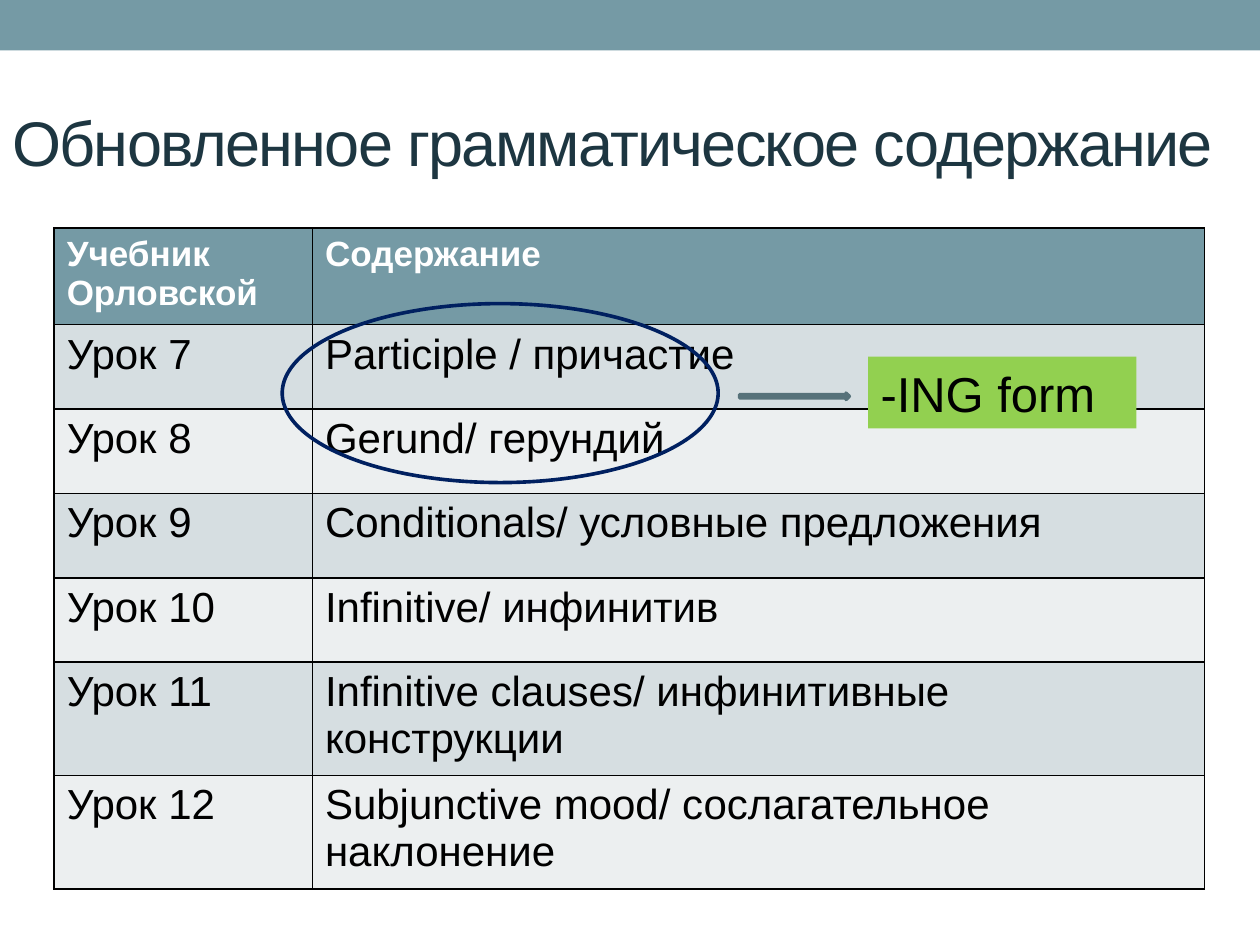
from typing import NamedTuple, Optional

from lxml import etree
from pptx import Presentation
from pptx.dml.color import RGBColor
from pptx.enum.shapes import MSO_SHAPE
from pptx.enum.text import MSO_ANCHOR, PP_ALIGN
from pptx.oxml.ns import qn
from pptx.util import Inches, Pt

RECT, OVAL, ARROW = MSO_SHAPE.RECTANGLE, MSO_SHAPE.OVAL, MSO_SHAPE.RIGHT_ARROW
MIDDLE, LEFT = MSO_ANCHOR.MIDDLE, PP_ALIGN.LEFT

TEAL = RGBColor(0x75, 0x9A, 0xA5)
DARK_TEAL = RGBColor(0x57, 0x72, 0x7A)
TITLE_COLOR = RGBColor(0x1D, 0x36, 0x41)
BAND_DARK = RGBColor(0xD6, 0xDE, 0xE1)
BAND_LIGHT = RGBColor(0xEC, 0xEF, 0xF0)
NAVY = RGBColor(0x00, 0x20, 0x60)
GREEN = RGBColor(0x92, 0xD0, 0x50)
BLACK = RGBColor(0, 0, 0)
WHITE = RGBColor(0xFF, 0xFF, 0xFF)

FONT = "Arial"
LINE_WIDTH = 2.08


class Box(NamedTuple):
    left: float
    top: float
    width: float
    height: float

    def lengths(self):
        return [Inches(v) for v in self]


class Lesson(NamedTuple):
    unit: str
    topic: str


HEADER = Lesson("Учебник Орловской", "Содержание")
LESSONS = [
    Lesson("Урок 7", "Participle / причастие"),
    Lesson("Урок 8", "Gerund/ герундий"),
    Lesson("Урок 9", "Conditionals/ условные предложения"),
    Lesson("Урок 10", "Infinitive/ инфинитив"),
    Lesson("Урок 11", "Infinitive clauses/ инфинитивные конструкции"),
    Lesson("Урок 12", "Subjunctive mood/ сослагательное наклонение"),
]
COLUMN_WIDTHS = (2.05, 7.08)
HEADER_HEIGHT, ROW_HEIGHT = 0.71, 0.67


def set_text(tf, text: str, size: float, color: RGBColor, bold: bool = False):
    tf.text = text
    p = tf.paragraphs[0]
    p.alignment = LEFT
    r = p.runs[0]
    r.font.name, r.font.size, r.font.bold = FONT, Pt(size), bold
    r.font.color.rgb = color
    return r


def add_shape(slide, kind, box: Box, fill: Optional[RGBColor] = None,
              line: Optional[RGBColor] = None):
    sp = slide.shapes.add_shape(kind, *box.lengths())
    sp.shadow.inherit = False
    if fill is None:
        sp.fill.background()
    else:
        sp.fill.solid()
        sp.fill.fore_color.rgb = fill
    if line is None:
        sp.line.fill.background()
    else:
        sp.line.color.rgb = line
        sp.line.width = Pt(LINE_WIDTH)
    return sp


def add_title(slide, text: str, box: Box) -> None:
    tf = slide.shapes.add_textbox(*box.lengths()).text_frame
    tf.word_wrap = True
    tf.vertical_anchor = MIDDLE
    r = set_text(tf, text, 36, TITLE_COLOR)
    r.font._element.set("spc", "-100")


def set_borders(cell) -> None:
    """Draw a 1 pt black line on all four sides, ahead of the fill element."""
    tc_pr = cell._tc.get_or_add_tcPr()
    for i, side in enumerate(("a:lnL", "a:lnR", "a:lnT", "a:lnB")):
        ln = etree.Element(qn(side), w=str(Pt(1)))
        fill = etree.SubElement(ln, qn("a:solidFill"))
        etree.SubElement(fill, qn("a:srgbClr"), val=str(BLACK))
        tc_pr.insert(i, ln)


def add_lesson_table(slide, left: float, top: float) -> None:
    rows = [HEADER, *LESSONS]
    box = Box(left, top, sum(COLUMN_WIDTHS),
              HEADER_HEIGHT + ROW_HEIGHT * len(LESSONS))
    table = slide.shapes.add_table(len(rows), len(COLUMN_WIDTHS),
                                   *box.lengths()).table
    for column, width in zip(table.columns, COLUMN_WIDTHS):
        column.width = Inches(width)
    for i, lesson in enumerate(rows):
        is_header = i == 0
        table.rows[i].height = Inches(HEADER_HEIGHT if is_header else ROW_HEIGHT)
        band = BAND_DARK if i % 2 else BAND_LIGHT
        for j, text in enumerate(lesson):
            cell = table.cell(i, j)
            cell.fill.solid()
            cell.fill.fore_color.rgb = TEAL if is_header else band
            set_borders(cell)
            set_text(cell.text_frame, text, 20 if is_header else 24,
                     WHITE if is_header else BLACK, is_header)


def main() -> None:
    prs = Presentation()
    prs.slide_width, prs.slide_height = Inches(10), Inches(7.5)
    slide = prs.slides.add_slide(prs.slide_layouts[6])

    add_shape(slide, RECT, Box(0, 0, 10, 0.4), TEAL)
    add_title(slide, "Обновленное грамматическое содержание",
              Box(0, 0.58, 10, 1.08))
    add_lesson_table(slide, 0.43, 1.81)
    add_shape(slide, OVAL, Box(2.24, 2.41, 3.46, 1.42), line=NAVY)
    label = add_shape(slide, RECT, Box(6.89, 2.83, 2.13, 0.57), GREEN)
    set_text(label.text_frame, "-ING form", 28, BLACK)
    add_shape(slide, ARROW, Box(5.87, 3.12, 0.87, 0.05), TEAL, DARK_TEAL)

    prs.save("out.pptx")


if __name__ == "__main__":
    main()
